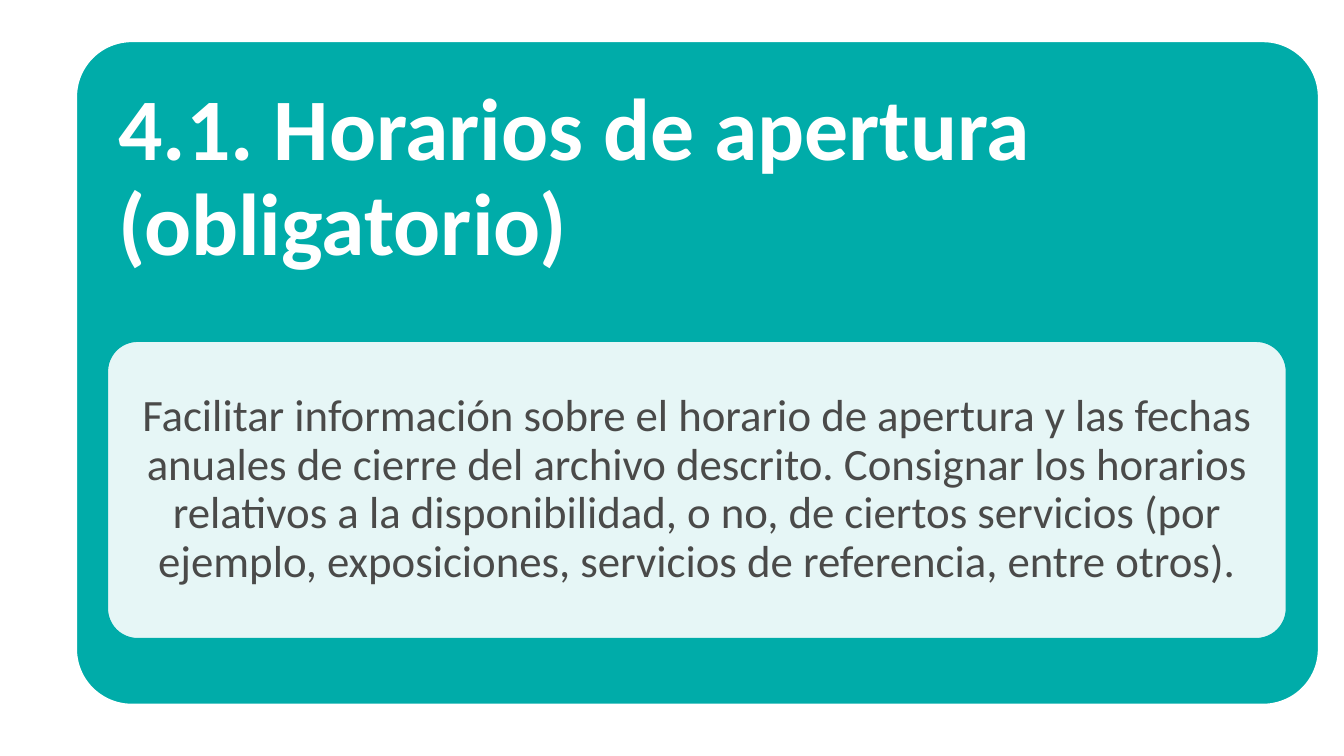
"""Build the slide on opening hours: a heading card holding a description panel."""
from lxml import etree
from pptx import Presentation
from pptx import util as u
from pptx.dml.color import RGBColor
from pptx.enum import shapes, text
from pptx.oxml.ns import qn

TITLE = "4.1. Horarios de apertura (obligatorio)"
DESCRIPTION = (
    "Facilitar información sobre el horario de apertura y las fechas anuales de cierre "
    "del archivo descrito. Consignar los horarios relativos a la disponibilidad, o no, "
    "de ciertos servicios (por ejemplo, exposiciones, servicios de referencia, entre otros)."
)
COLORS = {"teal": "00ACA9", "white": "FFFFFF", "gray": "4A4A49"}
FONT = "Calibri"
SLIDE_SIZE = (720, 405)
CARD = (40.3, 21.6, 666.7, 356.4)
TITLE_BOX = (49, 31, 648.7, 133)
PANEL = (56.9, 182.2, 632.9, 160.6)


def color(name):
    return RGBColor.from_string(COLORS[name])


def add_round_box(slide, box, fill, line, radius, opacity=100):
    shape = slide.shapes.add_shape(
        shapes.MSO_SHAPE.ROUNDED_RECTANGLE, *(u.Pt(length) for length in box)
    )
    shape.adjustments[0] = radius
    shape.shadow.inherit = False
    shape.fill.solid()
    shape.fill.fore_color.rgb = color(fill)
    shape.line.color.rgb = color(line)
    shape.line.width = u.Pt(2)
    if opacity < 100:
        fill_color = shape.element.spPr.find(qn("a:solidFill"))[0]
        etree.SubElement(fill_color, qn("a:alpha"), val=str(opacity * 1000))
    return shape


def write_text(shape, content, *, size, ink, align, anchor, inset, bold=False):
    frame = shape.text_frame
    frame.word_wrap = True
    frame.auto_size = text.MSO_AUTO_SIZE.NONE
    frame.vertical_anchor = anchor
    frame.margin_left = frame.margin_right = u.Pt(inset)
    frame.margin_top = frame.margin_bottom = u.Pt(inset)
    paragraph = frame.paragraphs[0]
    paragraph.alignment = align
    paragraph.line_spacing = 0.9
    paragraph.space_before = u.Pt(0)
    run = paragraph.add_run()
    run.text = content
    run.font.name = FONT
    run.font.size = u.Pt(size)
    run.font.bold = bold
    run.font.color.rgb = color(ink)


def main():
    presentation = Presentation()
    presentation.slide_width, presentation.slide_height = map(u.Pt, SLIDE_SIZE)
    slide = presentation.slides.add_slide(presentation.slide_layouts[5])

    title = slide.shapes.title
    title.left, title.top, title.width, title.height = map(u.Pt, TITLE_BOX)
    write_text(title, TITLE, size=47, ink="white", bold=True, inset=14.4,
               align=text.PP_ALIGN.LEFT, anchor=text.MSO_ANCHOR.TOP)

    card = add_round_box(slide, CARD, "teal", "white", 0.085)
    title.element.addprevious(card.element)

    panel = add_round_box(slide, PANEL, "white", "teal", 0.105, opacity=90)
    write_text(panel, DESCRIPTION, size=24, ink="gray", inset=7.2,
               align=text.PP_ALIGN.CENTER, anchor=text.MSO_ANCHOR.MIDDLE)

    presentation.save("out.pptx")


if __name__ == "__main__":
    main()
